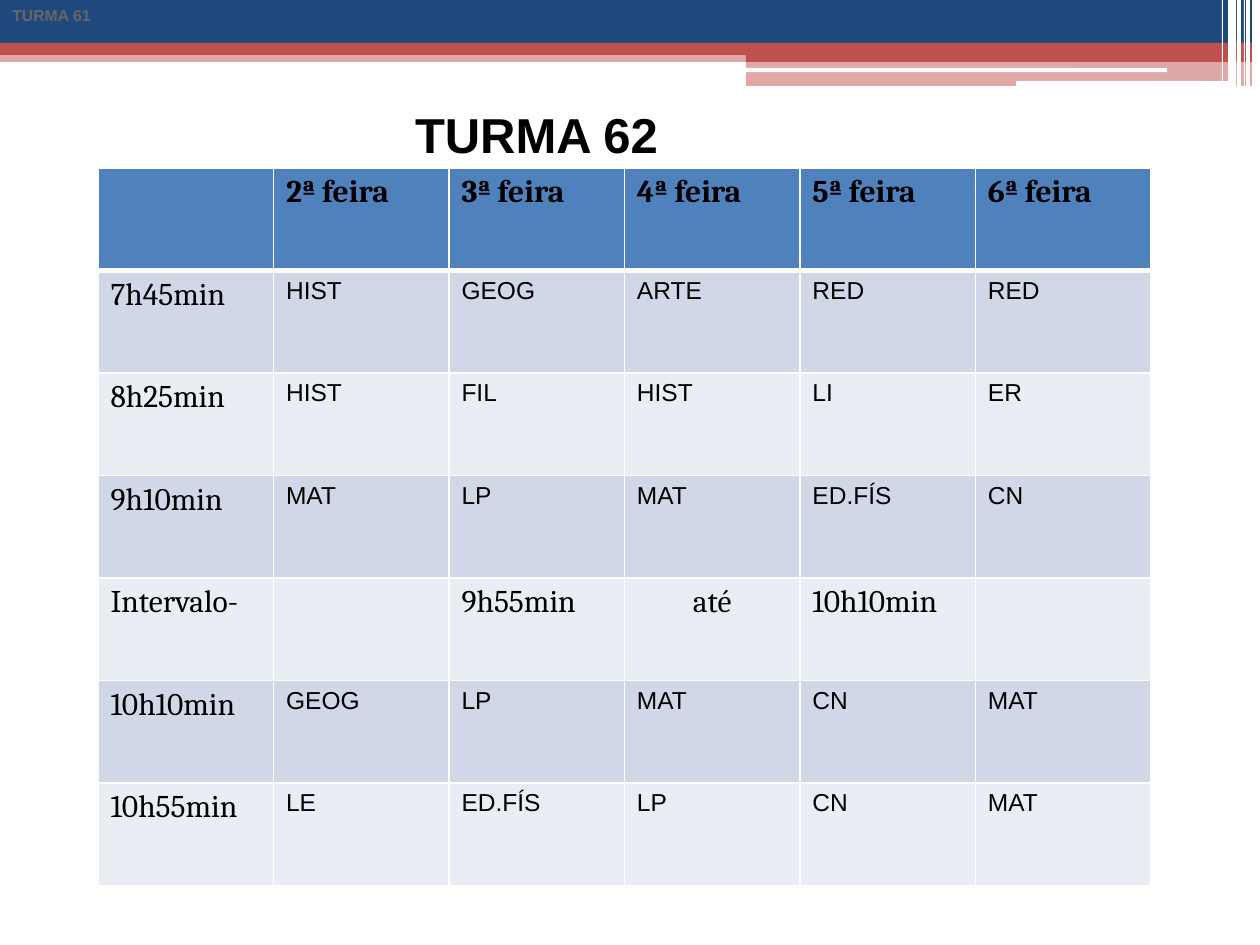
import dataclasses

import pptx
import pptx.dml.color
import pptx.enum.shapes
import pptx.enum.text
import pptx.oxml
import pptx.oxml.ns
import pptx.util
from lxml import etree

SHAPE = pptx.enum.shapes.MSO_SHAPE
ALIGN = pptx.enum.text.PP_ALIGN
qn = pptx.oxml.ns.qn


@dataclasses.dataclass(frozen=True)
class Theme:
    navy: str = "1F497D"
    red: str = "C0504D"
    white: str = "FFFFFF"
    black: str = "000000"
    gray: str = "666666"
    head: str = "4F81BD"
    bands: tuple = ("D0D8E8", "E9EDF4")
    sans: str = "Arial"
    serif: str = "Cambria"
    title: int = 28
    label: int = 18
    body: int = 14
    small: int = 9
    thin: int = 1
    thick: int = 3


THEME = Theme()

DAYS = ["", "2ª feira", "3ª feira", "4ª feira", "5ª feira", "6ª feira"]
BREAK = "Intervalo-"
LESSONS = [
    ["7h45min", "HIST", "GEOG", "ARTE", "RED", "RED"],
    ["8h25min", "HIST", "FIL", "HIST", "LI", "ER"],
    ["9h10min", "MAT", "LP", "MAT", "ED.FÍS", "CN"],
    [BREAK, "", "9h55min", "até", "10h10min", ""],
    ["10h10min", "GEOG", "LP", "MAT", "CN", "MAT"],
    ["10h55min", "LE", "ED.FÍS", "LP", "CN", "MAT"],
]


def emu(px):
    return pptx.util.Emu(round(px * 914400 / 126))


def rgb(code):
    return pptx.dml.color.RGBColor.from_string(code)


def write(frame, text, font, size, color=THEME.black, bold=False, align=ALIGN.LEFT):
    frame.text = text
    para = frame.paragraphs[0]
    para.alignment = align
    for run in para.runs:
        run.font.name = font
        run.font.size = pptx.util.Pt(size)
        run.font.bold = bold
        run.font.color.rgb = rgb(color)


def add_bar(slide, box, color, alpha=100, kind=SHAPE.RECTANGLE):
    """Add a borderless bar; alpha is its opacity in percent."""
    bar = slide.shapes.add_shape(kind, *map(emu, box))
    bar.shadow.inherit = False
    bar.line.fill.background()
    bar.fill.solid()
    bar.fill.fore_color.rgb = rgb(color)
    if alpha < 100:
        tint = bar.element.spPr.find(".//" + qn("a:srgbClr"))
        etree.SubElement(tint, qn("a:alpha"), val=str(alpha * 1000))


def add_label(slide, box, text, size, color, align):
    label = slide.shapes.add_textbox(*map(emu, box))
    frame = label.text_frame
    frame.word_wrap = True
    write(frame, text, THEME.sans, size, color, True, align)
    return frame


def add_banner(slide, box):
    """Draw the coloured bands and the white lines cut into them."""
    left, top, width, height = box
    right = left + width
    step = left + 746
    rest = right - step
    add_bar(slide, (left, top + 50, width, 12), THEME.red, 50)
    add_bar(slide, (left, top, width, 43), THEME.navy)
    add_bar(slide, (left, top + 43, width, 12), THEME.red)
    add_bar(slide, (step, top + 49, rest, 13), THEME.red)
    add_bar(slide, (step, top + 61, rest, height - 61), THEME.red, 50)
    for x, y, wide, high in [(745, 68, 422, 4), (1016, 81, 220, 5)]:
        add_bar(slide, (left + x, top + y, wide, high), THEME.white,
                kind=SHAPE.ROUNDED_RECTANGLE)
    stripes = [(8, 8, 0), (14, 4, 0), (16, 1, 0), (23, 4, 0), (32, 8, 5), (38, 1, 5)]
    for back, wide, short in stripes:
        add_bar(slide, (right - back, top, wide, height - short), THEME.white)
    add_label(slide, (left, top, 200, 40), "TURMA 61", THEME.small, THEME.gray, ALIGN.LEFT)


def add_title(slide, box):
    frame = add_label(slide, box, "TURMA 62", THEME.title, THEME.black, ALIGN.CENTER)
    frame.auto_size = pptx.enum.text.MSO_AUTO_SIZE.SHAPE_TO_FIT_TEXT


def edge(cell, sides):
    """Draw white borders; sides maps L, R, T and B to widths in points."""
    props = cell._tc.get_or_add_tcPr()
    for side, width in sides.items():
        line = etree.SubElement(props, qn("a:ln" + side), w=str(pptx.util.Pt(width)))
        fill = etree.SubElement(line, qn("a:solidFill"))
        etree.SubElement(fill, qn("a:srgbClr"), val=THEME.white)


def add_grid(slide, box):
    rows = [DAYS] + LESSONS
    frame = slide.shapes.add_table(len(rows), len(DAYS), *map(emu, box))
    table = frame.table
    for col in table.columns:
        col.width = emu(box[2] / len(DAYS))
    for i, texts in enumerate(rows):
        table.rows[i].height = emu(box[3] / len(rows))
        head = i == 0
        sides = {"L": THEME.thin, "R": THEME.thin,
                 "T": THEME.thick if i == 1 else THEME.thin,
                 "B": THEME.thick if head else THEME.thin}
        for j, text in enumerate(texts):
            cell = table.cell(i, j)
            edge(cell, sides)
            cell.fill.solid()
            cell.fill.fore_color.rgb = rgb(THEME.head if head else THEME.bands[(i - 1) % 2])
            large = head or j == 0 or texts[0] == BREAK
            write(cell.text_frame, text,
                  THEME.serif if large else THEME.sans,
                  THEME.label if large else THEME.body,
                  bold=head,
                  align=ALIGN.CENTER if text == "até" else ALIGN.LEFT)


def main():
    deck = pptx.Presentation()
    deck.slide_width, deck.slide_height = emu(1260), emu(945)
    slide = deck.slides.add_slide(deck.slide_layouts[6])
    add_banner(slide, (0, 0, 1260, 86))
    add_title(slide, (197, 98, 679, 72))
    add_grid(slide, (98, 168, 1053, 718))
    deck.save("out.pptx")


if __name__ == "__main__":
    main()
